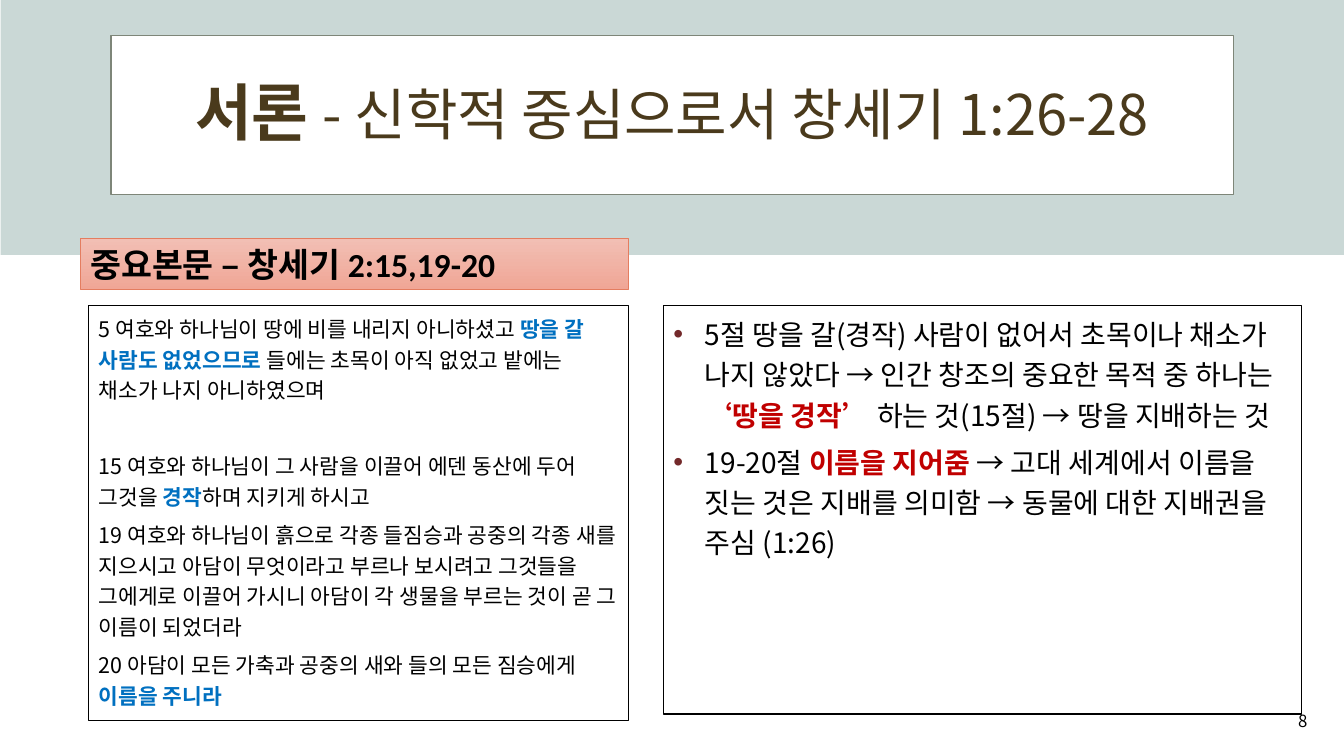
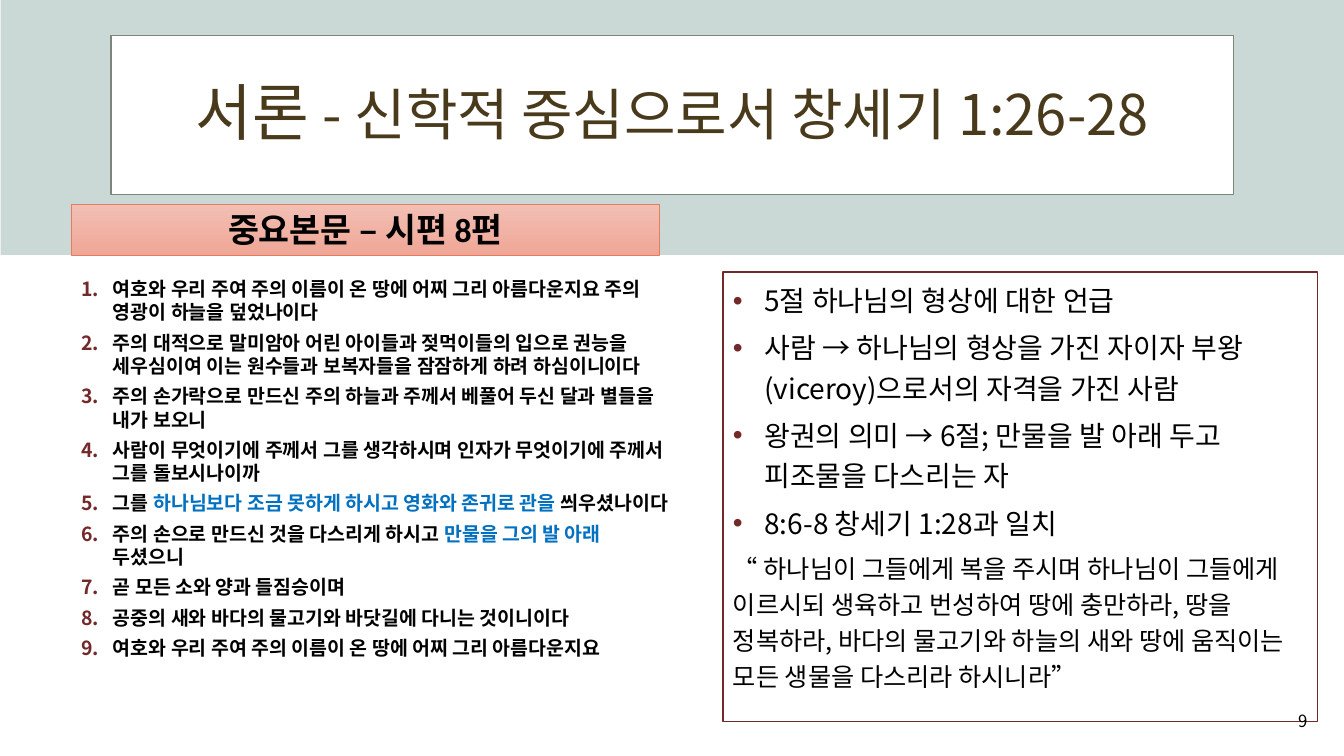
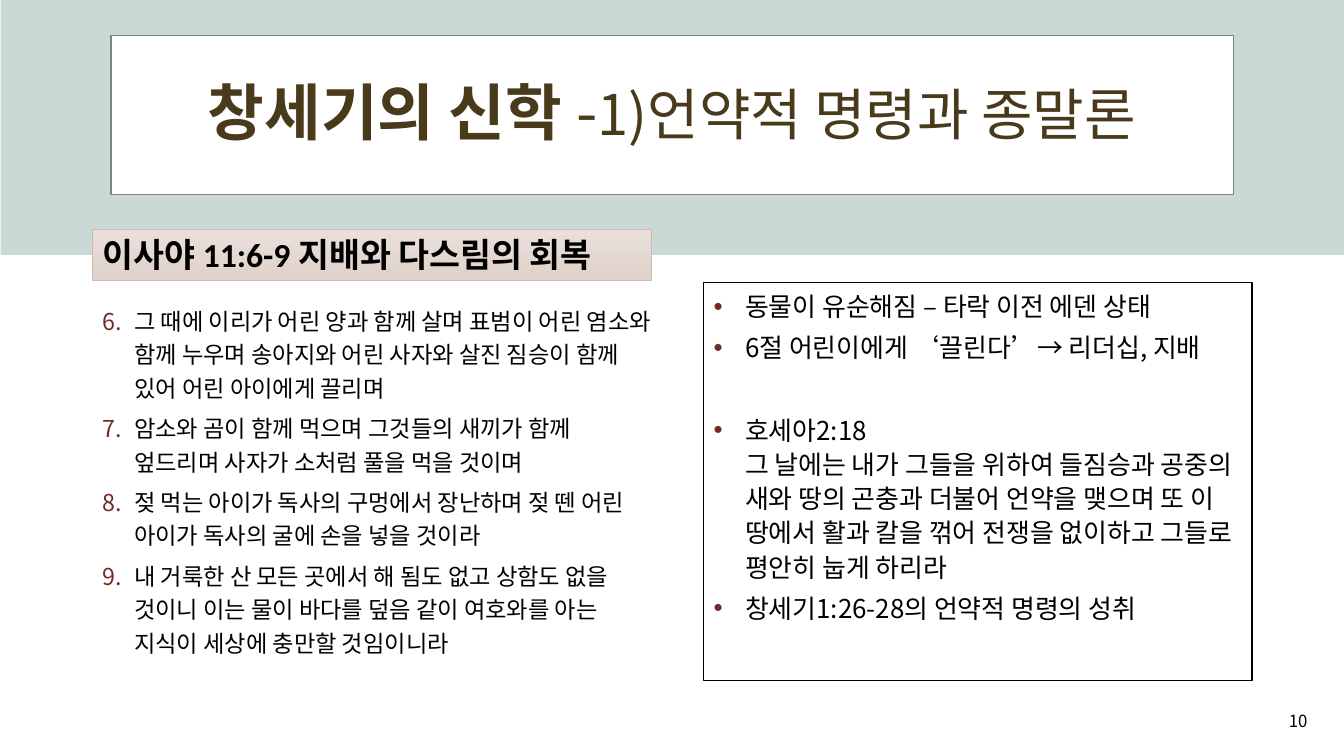
from dataclasses import dataclass
from typing import NamedTuple

from lxml.etree import SubElement
from pptx import Presentation
from pptx.dml.color import RGBColor
from pptx.enum.shapes import MSO_SHAPE
from pptx.enum.text import MSO_ANCHOR, MSO_AUTO_SIZE, PP_ALIGN
from pptx.oxml.ns import qn
from pptx.util import Pt

COLORS = {
    "paper": "FFFFFF",
    "ink": "000000",
    "band": "CAD8D6",
    "frame": "7E8679",
    "title": "4A3A1C",
    "bullet": "73292A",
    "wine": "72292A",
    "verse": "0070C0",
    "stress": "C00000",
    "coral_top": "F2BFB4",
    "coral_bottom": "F0A696",
    "coral_line": "E47D60",
    "sand_top": "E9E0DB",
    "sand_bottom": "DFD1C9",
    "sand_line": "CEBBAF",
}
KOREAN = "Noto Sans CJK KR"
HANGING = 22.5
GAP = 5


class Box(NamedTuple):
    left: float
    top: float
    width: float
    height: float


class Run(NamedTuple):
    text: str
    color: str = "ink"
    bold: bool = False
    size: float | None = None


@dataclass(frozen=True)
class Item:
    runs: tuple[Run, ...]
    marker: str = ""
    before: float = GAP


@dataclass(frozen=True)
class Panel:
    box: Box
    size: float
    items: tuple[Item, ...]
    spacing: float = 1.2
    border: str = ""
    start: int = 1


@dataclass(frozen=True)
class Heading:
    box: Box
    text: str
    palette: str = "coral"
    align: PP_ALIGN = PP_ALIGN.LEFT


@dataclass(frozen=True)
class Page:
    number: int
    title: tuple[Run, ...]
    heading: Heading
    scripture: Panel
    notes: Panel


def rgb(name: str) -> RGBColor:
    return RGBColor.from_string(COLORS[name])


def write(paragraph, text: str, *, size: float, color: str = "ink",
          bold: bool = False, font: str = KOREAN) -> None:
    for index, line in enumerate(text.split("\n")):
        if index:
            paragraph.add_line_break()
        run = paragraph.add_run()
        run.text = line
        run.font.name = font
        run.font.size = Pt(size)
        run.font.bold = bold
        run.font.color.rgb = rgb(color)
        SubElement(run.font._element, qn("a:ea"), typeface=KOREAN)


def place(shape, box: Box) -> None:
    shape.left, shape.top, shape.width, shape.height = map(Pt, box)


def outline(shape, color: str, width: float = 1) -> None:
    shape.line.color.rgb = rgb(color)
    shape.line.width = Pt(width)


def add_rectangle(slide, box: Box):
    rectangle = slide.shapes.add_shape(MSO_SHAPE.RECTANGLE, *map(Pt, box))
    rectangle.shadow.inherit = False
    return rectangle


def mark(paragraph, marker: str, start: int) -> None:
    properties = paragraph._p.get_or_add_pPr()
    indent = Pt(HANGING) if marker else 0
    properties.set("marL", str(indent))
    properties.set("indent", str(-indent))
    if not marker:
        SubElement(properties, qn("a:buNone"))
        return
    tint = SubElement(properties, qn("a:buClr"))
    SubElement(tint, qn("a:srgbClr"), val=COLORS["bullet"])
    if marker == "1.":
        numbering = SubElement(properties, qn("a:buAutoNum"), type="arabicPeriod")
        if start > 1:
            numbering.set("startAt", str(start))
    else:
        SubElement(properties, qn("a:buFont"), typeface="Arial")
        SubElement(properties, qn("a:buChar"), char=marker)


def fill_panel(body, panel: Panel) -> None:
    place(body, panel.box)
    if panel.border:
        body.fill.solid()
        body.fill.fore_color.rgb = rgb("paper")
        outline(body, panel.border)
    frame = body.text_frame
    frame.word_wrap = True
    frame.auto_size = MSO_AUTO_SIZE.NONE
    for index, item in enumerate(panel.items):
        paragraph = frame.add_paragraph() if index else frame.paragraphs[0]
        paragraph.line_spacing = panel.spacing
        paragraph.space_before = Pt(item.before if index else 0)
        mark(paragraph, item.marker, panel.start)
        for run in item.runs:
            write(paragraph, run.text, size=run.size or panel.size,
                  color=run.color, bold=run.bold)


def add_heading(slide, heading: Heading) -> None:
    banner = add_rectangle(slide, heading.box)
    banner.fill.gradient()
    banner.fill.gradient_angle = 270
    for stop, edge in zip(banner.fill.gradient_stops, ("top", "bottom")):
        stop.color.rgb = rgb(f"{heading.palette}_{edge}")
    outline(banner, f"{heading.palette}_line", 0.5)
    frame = banner.text_frame
    frame.word_wrap = True
    frame.vertical_anchor = MSO_ANCHOR.TOP
    frame.paragraphs[0].alignment = heading.align
    write(frame.paragraphs[0], heading.text, size=24, bold=True, font="Calibri")


def add_number(slide, number: int) -> None:
    frame = slide.shapes.add_textbox(*map(Pt, Box(725, 500.5, 216, 28.75))).text_frame
    frame.word_wrap = True
    frame.vertical_anchor = MSO_ANCHOR.MIDDLE
    frame.paragraphs[0].alignment = PP_ALIGN.RIGHT
    write(frame.paragraphs[0], str(number), size=12)


def dress_layout(layout, slide) -> None:
    band = add_rectangle(slide, Box(0.5, 0, 960, 182))
    band.line.fill.background()
    title_frame = add_rectangle(slide, Box(79.2, 25.4, 802, 113.4))
    outline(title_frame, "frame")
    for depth, (shape, color) in enumerate(((band, "band"), (title_frame, "paper"))):
        shape.fill.solid()
        shape.fill.fore_color.rgb = rgb(color)
        layout.shapes.element.insert(2 + depth, shape.element)
    place(layout.placeholders[0], Box(30, 30, 900, 104.4))


def build_page(slide, page: Page) -> None:
    title, scripture, notes = slide.placeholders
    frame = title.text_frame
    frame.vertical_anchor = MSO_ANCHOR.MIDDLE
    frame.auto_size = MSO_AUTO_SIZE.NONE
    frame.paragraphs[0].alignment = PP_ALIGN.CENTER
    frame.paragraphs[0].line_spacing = 0.9
    for run in page.title:
        write(frame.paragraphs[0], run.text, size=run.size or 40,
              color="title", bold=run.bold)
    fill_panel(scripture, page.scripture)
    fill_panel(notes, page.notes)
    add_number(slide, page.number)
    add_heading(slide, page.heading)


def plain(*runs: Run | str, marker: str = "", before: float = GAP,
          bold: bool = False) -> Item:
    parts = tuple(Run(run, bold=bold) if isinstance(run, str) else run for run in runs)
    return Item(parts, marker, before)


def bullet(*runs: Run | str, before: float = GAP) -> Item:
    return plain(*runs, marker="•", before=before)


def verse(*runs: Run | str, bold: bool = False) -> Item:
    return plain(*runs, marker="1.", bold=bold)


def psalm(*runs: Run | str) -> Item:
    return verse(*runs, bold=True)


def key(text: str, color: str = "verse") -> Run:
    return Run(text, color, True)


INTRO_TOPIC = Run("- 신학적 중심으로서 창세기 1:26-28")

PAGES = (
    Page(
        8,
        (Run("서론 ", bold=True, size=44), INTRO_TOPIC),
        Heading(Box(57.4, 170.4, 391.7, 36.4), "중요본문 – 창세기 2:15,19-20"),
        Panel(Box(63.2, 218.3, 385.9, 296.4), 15.3, (
            plain("5 여호와 하나님이 땅에 비를 내리지 아니하셨고 ",
                  key("땅을 갈 사람도 없었으므로 "),
                  "들에는 초목이 아직 없었고 밭에는 채소가 나지 아니하였으며"),
            plain("15 여호와 하나님이 그 사람을 이끌어 에덴 동산에 두어 그것을 ",
                  key("경작"), "하며 지키게 하시고", before=32),
            plain("19 여호와 하나님이 흙으로 각종 들짐승과 공중의 각종 새를 지으시고 "
                  "아담이 무엇이라고 부르나 보시려고 그것들을 그에게로 이끌어 가시니 "
                  "아담이 각 생물을 부르는 것이 곧 그 이름이 되었더라"),
            plain("20 아담이 모든 가축과 공중의 새와 들의 모든 짐승에게 ",
                  key("이름을 주니라 ")),
        ), border="ink"),
        Panel(Box(473.8, 218.3, 456, 291.6), 20, (
            bullet("5절 땅을 갈(경작) 사람이 없어서 초목이나 채소가 나지 않았다 → "
                   "인간 창조의 중요한 목적 중 하나는 ",
                   key("‘땅을 경작’ ", "stress"),
                   "하는 것(15절) → 땅을 지배하는 것"),
            bullet("19-20절 ", key("이름을 지어줌 ", "stress"),
                   "→ 고대 세계에서 이름을 짓는 것은 지배를 의미함 → "
                   "동물에 대한 지배권을 주심 (1:26)"),
        ), border="ink"),
    ),
    Page(
        9,
        (Run("서론 ", size=44), INTRO_TOPIC),
        Heading(Box(51, 146, 420, 36.4), "중요본문 – 시편 8편", align=PP_ALIGN.CENTER),
        Panel(Box(51, 194.2, 437.8, 321), 13.9, (
            psalm("여호와 우리 주여 주의 이름이 온 땅에 어찌 그리 아름다운지요 "
                  "주의 영광이 하늘을 덮었나이다"),
            psalm("주의 대적으로 말미암아 어린 아이들과 젖먹이들의 입으로 권능을 "
                  "세우심이여 이는 원수들과 보복자들을 잠잠하게 하려 하심이니이다"),
            psalm("주의 손가락으로 만드신 주의 하늘과 주께서 베풀어 두신 달과 별들을 "
                  "내가 보오니"),
            psalm("사람이 무엇이기에 주께서 그를 생각하시며 인자가 무엇이기에 주께서 "
                  "그를 돌보시나이까"),
            psalm("그를 ", key("하나님보다 조금 못하게 하시고 영화와 존귀로 관을 "),
                  "씌우셨나이다"),
            psalm("주의 손으로 만드신 것을 다스리게 하시고 ",
                  key("만물을 그의 발 아래 "), "두셨으니"),
            psalm("곧 모든 소와 양과 들짐승이며"),
            psalm("공중의 새와 바다의 물고기와 바닷길에 다니는 것이니이다"),
            psalm("여호와 우리 주여 주의 이름이 온 땅에 어찌 그리 아름다운지요"),
        ), spacing=1.0),
        Panel(Box(516.3, 194.2, 425, 321), 20, (
            bullet("5절 하나님의 형상에 대한 언급"),
            bullet("사람 → 하나님의 형상을 가진 자이자 부왕(viceroy)으로서의 자격을 가진 사람"),
            bullet("왕권의 의미 → 6절; 만물을 발 아래 두고 피조물을 다스리는 자"),
            bullet("8:6-8 창세기 1:28과 일치"),
            plain(Run("“ 하나님이 그들에게 복을 주시며 하나님이 그들에게 이르시되 "
                      "생육하고 번성하여 땅에 충만하라, 땅을 정복하라, 바다의 물고기와 "
                      "하늘의 새와 땅에 움직이는 모든 생물을 다스리라 하시니라”", size=18)),
        ), border="wine"),
    ),
    Page(
        10,
        (Run("창세기의 신학 ", bold=True, size=44), Run("-", size=44),
         Run("1)언약적 명령과 종말론")),
        Heading(Box(66.2, 163.8, 399, 36.4), "이사야 11:6-9 지배와 다스림의 회복", "sand"),
        Panel(Box(66.2, 211.7, 408.2, 303.2), 16.6, (
            verse("그 때에 이리가 어린 양과 함께 살며 표범이 어린 염소와 함께 누우며 "
                  "송아지와 어린 사자와 살진 짐승이 함께 있어 어린 아이에게 끌리며"),
            verse("암소와 곰이 함께 먹으며 그것들의 새끼가 함께 엎드리며 "
                  "사자가 소처럼 풀을 먹을 것이며"),
            verse("젖 먹는 아이가 독사의 구멍에서 장난하며 젖 뗀 어린 아이가 "
                  "독사의 굴에 손을 넣을 것이라"),
            verse("내 거룩한 산 모든 곳에서 해 됨도 없고 상함도 없을 것이니 이는 물이 "
                  "바다를 덮음 같이 여호와를 아는 지식이 세상에 충만할 것임이니라"),
        ), start=6),
        Panel(Box(502.5, 201.8, 391.7, 284.4), 18.5, (
            bullet("동물이 유순해짐 – 타락 이전 에덴 상태"),
            bullet("6절 어린이에게 ‘끌린다’→ 리더십, 지배"),
            bullet("호세아2:18\n그 날에는 내가 그들을 위하여 들짐승과 공중의 새와 "
                   "땅의 곤충과 더불어 언약을 맺으며 또 이 땅에서 활과 칼을 꺾어 "
                   "전쟁을 없이하고 그들로 평안히 눕게 하리라", before=34.5),
            bullet("창세기1:26-28의 언약적 명령의 성취"),
        ), spacing=1.1, border="ink"),
    ),
)


def main() -> None:
    deck = Presentation()
    deck.slide_width, deck.slide_height = Pt(960), Pt(540)
    layout = deck.slide_layouts[3]
    slides = [deck.slides.add_slide(layout) for _ in PAGES]
    dress_layout(layout, slides[0])
    for slide, page in zip(slides, PAGES):
        build_page(slide, page)
    deck.save("out.pptx")


if __name__ == "__main__":
    main()
